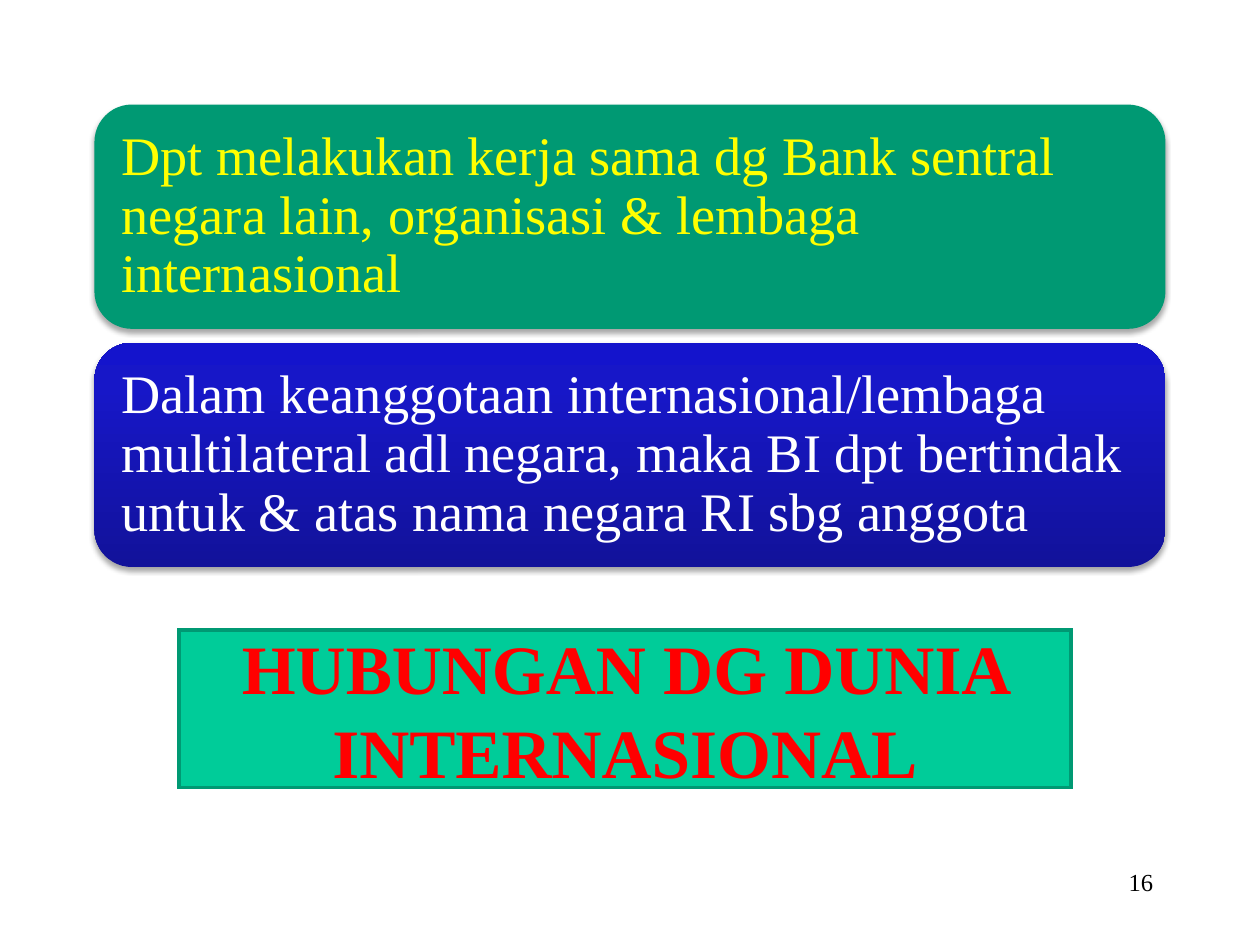
"""Build the slide on relations with the international world."""
from lxml import etree
from pptx import Presentation
from pptx import util as u
from pptx.dml.color import RGBColor
from pptx.enum import shapes, text
from pptx.oxml import parse_xml
from pptx.oxml.ns import nsdecls, qn

COLORS = {
    "green": "009973", "mint": "00CC99", "red": "FF0000", "yellow": "FFFF00",
    "white": "FFFFFF", "black": "000000",
    "navy": "12129A", "blue": "1717C8", "royal": "1414CC",
}


def rgb(name):
    return RGBColor.from_string(COLORS[name])


def write(frame, wording, size, color, align, bold=False, spacing=None):
    frame.word_wrap = True
    paragraph = frame.paragraphs[0]
    paragraph.alignment = align
    paragraph.line_spacing = spacing
    run = paragraph.add_run()
    run.text = wording
    run.font.name = "Times New Roman"
    run.font.size = u.Pt(size)
    run.font.bold = bold
    run.font.color.rgb = rgb(color)


deck = Presentation()
deck.slide_width, deck.slide_height = u.Inches(10), u.Inches(7.5)
slide = deck.slides.add_slide(deck.slide_layouts[6])

title = slide.shapes.add_shape(
    shapes.MSO_SHAPE.RECTANGLE, u.Inches(1.42), u.Inches(5), u.Inches(7.08), u.Inches(1.25))
title.shadow.inherit = False
title.fill.solid()
title.fill.fore_color.rgb = rgb("mint")
title.line.color.rgb = rgb("green")
title.line.width = u.Pt(2)
etree.SubElement(title.element.spPr.find(qn("a:ln")), qn("a:miter"), lim="800000")
title.text_frame.vertical_anchor = text.MSO_ANCHOR.MIDDLE
title.text_frame.margin_top = title.text_frame.margin_bottom = 0
write(title.text_frame, "HUBUNGAN DG DUNIA INTERNASIONAL", 39.6, "red",
      text.PP_ALIGN.CENTER, bold=True)

statements = [
    ("Dpt melakukan kerja sama dg Bank sentral negara lain, organisasi & lembaga internasional",
     "yellow", [(0, "green")]),
    ("Dalam keanggotaan internasional/lembaga multilateral adl negara, maka BI dpt bertindak "
     "untuk & atas nama negara RI sbg anggota",
     "white", [(0, "navy"), (80, "blue"), (100, "royal")]),
]
for row, (wording, color, stops) in enumerate(statements):
    panel = slide.shapes.add_shape(
        shapes.MSO_SHAPE.ROUNDED_RECTANGLE,
        u.Inches(0.75), u.Inches(0.83 + 1.89 * row), u.Inches(8.5), u.Inches(1.78))
    panel.line.fill.background()
    if len(stops) == 1:
        panel.fill.solid()
        panel.fill.fore_color.rgb = rgb(stops[0][1])
    else:
        panel.fill.gradient()
        panel.fill.gradient_angle = 90
        stop_list = panel.element.spPr.find(qn("a:gradFill")).find(qn("a:gsLst"))
        for stop in list(stop_list):
            stop_list.remove(stop)
        for position, shade in stops:
            stop = etree.SubElement(stop_list, qn("a:gs"), pos=str(position * 1000))
            etree.SubElement(stop, qn("a:srgbClr"), val=COLORS[shade])
    panel.shadow.inherit = False
    panel.element.spPr.find(qn("a:effectLst")).append(parse_xml(
        f'<a:outerShdw {nsdecls("a")} blurRad="{u.Pt(3.1)}" dist="{u.Pt(1.8)}" '
        f'dir="5400000" rotWithShape="0"><a:srgbClr val="{COLORS["black"]}">'
        '<a:alpha val="35000"/></a:srgbClr></a:outerShdw>'))
    frame = panel.text_frame
    frame.vertical_anchor = text.MSO_ANCHOR.MIDDLE
    frame.margin_left = frame.margin_right = u.Inches(0.13)
    frame.margin_top = frame.margin_bottom = u.Inches(0.13)
    write(frame, wording, 31, color, text.PP_ALIGN.LEFT, spacing=0.9)

page_number = slide.shapes.add_textbox(
    u.Inches(7.17), u.Inches(6.83), u.Inches(2.08), u.Inches(0.5))
write(page_number.text_frame, "16", 14, "black", text.PP_ALIGN.RIGHT)

deck.save("out.pptx")
